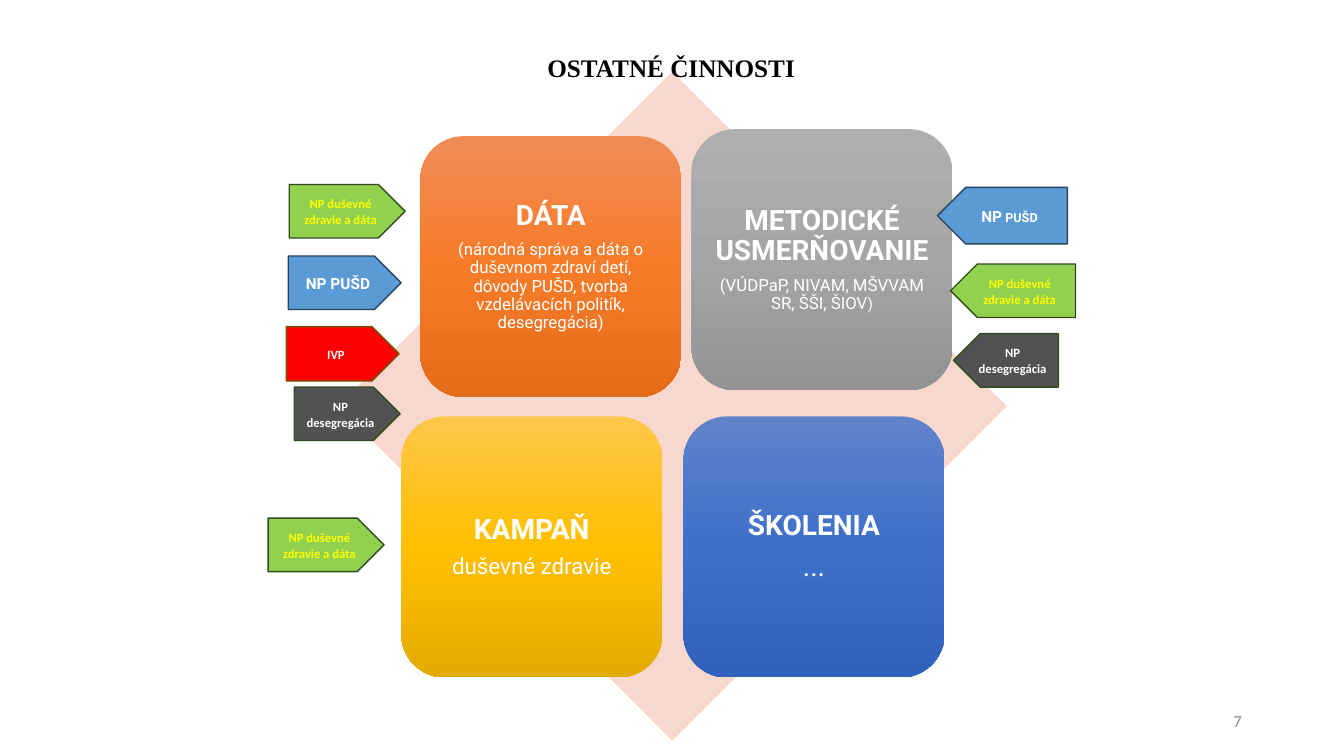
import copy
from dataclasses import dataclass

import pptx
import pptx.util
import pptx.dml.color
import pptx.enum.shapes
import pptx.enum.text
import pptx.oxml.ns

Pt = pptx.util.Pt
Align = pptx.enum.text.PP_ALIGN
Anchor = pptx.enum.text.MSO_ANCHOR
Shape = pptx.enum.shapes.MSO_SHAPE


@dataclass(frozen=True)
class Theme:
    black: str = "000000"
    white: str = "FFFFFF"
    yellow: str = "FFFF00"
    muted: str = "8C8C8C"
    pink: str = "F8D7CE"
    orange: tuple = ("F18C57", "F67B28", "E56C19")
    gray: tuple = ("AFAFAF", "A5A5A5", "939393")
    gold: tuple = ("FFC64B", "FFC000", "E3AB00")
    navy: tuple = ("6183CB", "3E70CA", "3062BB")
    blue: tuple = ("5B9BD5", "28445D")
    red: tuple = ("FF0000", "705400")
    green: tuple = ("92D050", "314C1F")
    dark: tuple = ("525252", "314C1F")
    sans: str = "Roboto"
    plain: str = "Calibri"
    serif: str = "Times New Roman"
    title: int = 18
    head: int = 20
    lead: int = 16
    body: int = 12
    label: int = 11
    small: int = 9


THEME = Theme()
CARD = 186.5


def rgb(color):
    return pptx.dml.color.RGBColor.from_string(color)


def style(para, face, size, color, bold=False, align=Align.CENTER):
    para.alignment = align
    font = para.font
    font.name, font.size, font.bold = face, Pt(size), bold
    font.color.rgb = rgb(color)


def fill_runs(para, runs):
    for text, size in runs:
        run = para.add_run()
        run.text = text
        if size != runs[0][1]:
            run.font.size = Pt(size)


def add_shape(slide, kind, box):
    shape = slide.shapes.add_shape(kind, *map(Pt, box))
    shape.shadow.inherit = False
    shape.line.fill.background()
    frame = shape.text_frame
    frame.word_wrap = True
    frame.vertical_anchor = Anchor.MIDDLE
    return shape


def add_diamond(slide, box):
    shape = add_shape(slide, Shape.DIAMOND, box)
    shape.fill.solid()
    shape.fill.fore_color.rgb = rgb(THEME.pink)


def shade(shape, colors):
    fill = shape.fill
    fill.gradient()
    fill.gradient_angle = 270
    stops = next(shape.element.iter(pptx.oxml.ns.qn("a:gsLst")))
    stops.insert(1, copy.deepcopy(stops[0]))
    for stop, color, place in zip(fill.gradient_stops, colors, (0, 0.5, 1)):
        stop.color.rgb = rgb(color)
        stop.position = place


def add_card(slide, left, top, colors, head, runs):
    shape = add_shape(slide, Shape.ROUNDED_RECTANGLE, (left, top, CARD, CARD))
    shade(shape, colors)
    frame = shape.text_frame
    frame.margin_left = frame.margin_right = Pt(6)
    frame.margin_top = frame.margin_bottom = Pt(6)
    paras = (frame.paragraphs[0], frame.add_paragraph())
    for para, parts in zip(paras, ([(head, THEME.head)], runs)):
        size = parts[0][1]
        style(para, THEME.sans, size, THEME.white, para is paras[0])
        para.line_spacing = 0.9
        para.space_after = Pt(0.35 * size)
        fill_runs(para, parts)


def add_tag(slide, box, look, runs, face=THEME.plain, ink=THEME.white, flip=False):
    shape = add_shape(slide, Shape.PENTAGON, box)
    fill, edge = look
    shape.fill.solid()
    shape.fill.fore_color.rgb = rgb(fill)
    shape.line.color.rgb = rgb(edge)
    shape.line.width = Pt(1)
    if flip:
        shape.element.spPr.xfrm.set("flipH", "1")
    para = shape.text_frame.paragraphs[0]
    style(para, face, runs[0][1], ink, True)
    para.line_spacing = 1.07
    para.space_after = Pt(8)
    fill_runs(para, runs)


def set_title(slide, text, box):
    title = slide.shapes.title
    title.left, title.top, title.width, title.height = map(Pt, box)
    frame = title.text_frame
    frame.text = text
    frame.vertical_anchor = Anchor.TOP
    style(frame.paragraphs[0], THEME.serif, THEME.title, THEME.black, True, Align.LEFT)
    slide.shapes.element.append(title.element)


def add_number(slide, text, box):
    frame = slide.shapes.add_textbox(*map(Pt, box)).text_frame
    frame.word_wrap = True
    frame.vertical_anchor = Anchor.MIDDLE
    frame.text = text
    style(frame.paragraphs[0], THEME.plain, THEME.body, THEME.muted, align=Align.RIGHT)


def main():
    deck = pptx.Presentation()
    deck.slide_width, deck.slide_height = Pt(960), Pt(540)
    slide = deck.slides.add_slide(deck.slide_layouts[5])
    t = THEME

    add_number(slide, "7", (678.2, 500.4, 216, 28.8))
    add_diamond(slide, (241.2, 51.1, 478, 478))

    data = (
        "(národná správa a dáta o duševnom zdraví detí, dôvody PUŠD, "
        "tvorba vzdelávacích politík, desegregácia)"
    )
    bodies = [("(VÚDPaP, NIVAM, MŠVVAM SR, ŠŠI, ŠIOV", t.body), (")", t.label)]
    for card in (
        (300.2, 97.2, t.orange, "DÁTA", [(data, t.body)]),
        (493.9, 92.2, t.gray, "METODICKÉ USMERŇOVANIE", bodies),
        (286.6, 297.4, t.gold, "KAMPAŇ", [("duševné zdravie", t.lead)]),
        (488.2, 297.4, t.navy, "ŠKOLENIA", [("...", t.head)]),
    ):
        add_card(slide, *card)

    mental = (t.green, [("NP duševné zdravie a dáta", t.small)], t.plain, t.yellow)
    mixing = (t.dark, [("NP desegregácia", t.small)], t.plain, t.white)
    support = (t.blue, [("NP PUŠD", t.label)], t.sans, t.white)
    short = (t.blue, [("NP", t.label), (" PUŠD", t.small)], t.sans, t.white)
    plan = (t.red, [("IVP", t.small)], t.plain, t.white)
    for box, tag, flip in (
        ((205.9, 182.9, 80.6, 38.2), support, False),
        ((204.5, 233.3, 80.6, 38.9), plan, False),
        ((206.6, 131.8, 82.8, 38.2), mental, False),
        ((210.2, 276.5, 75.6, 38.2), mixing, False),
        ((669.6, 133.9, 92.9, 40.3), short, True),
        ((679, 188.6, 89.3, 38.2), mental, True),
        ((681.1, 238.3, 74.9, 38.2), mixing, True),
        ((191.5, 370.1, 82.8, 38.2), mental, False),
    ):
        add_tag(slide, box, *tag, flip=flip)

    set_title(slide, "OSTATNÉ ČINNOSTI", (383.8, 33.8, 479.5, 28.8))
    deck.save("out.pptx")


if __name__ == "__main__":
    main()
